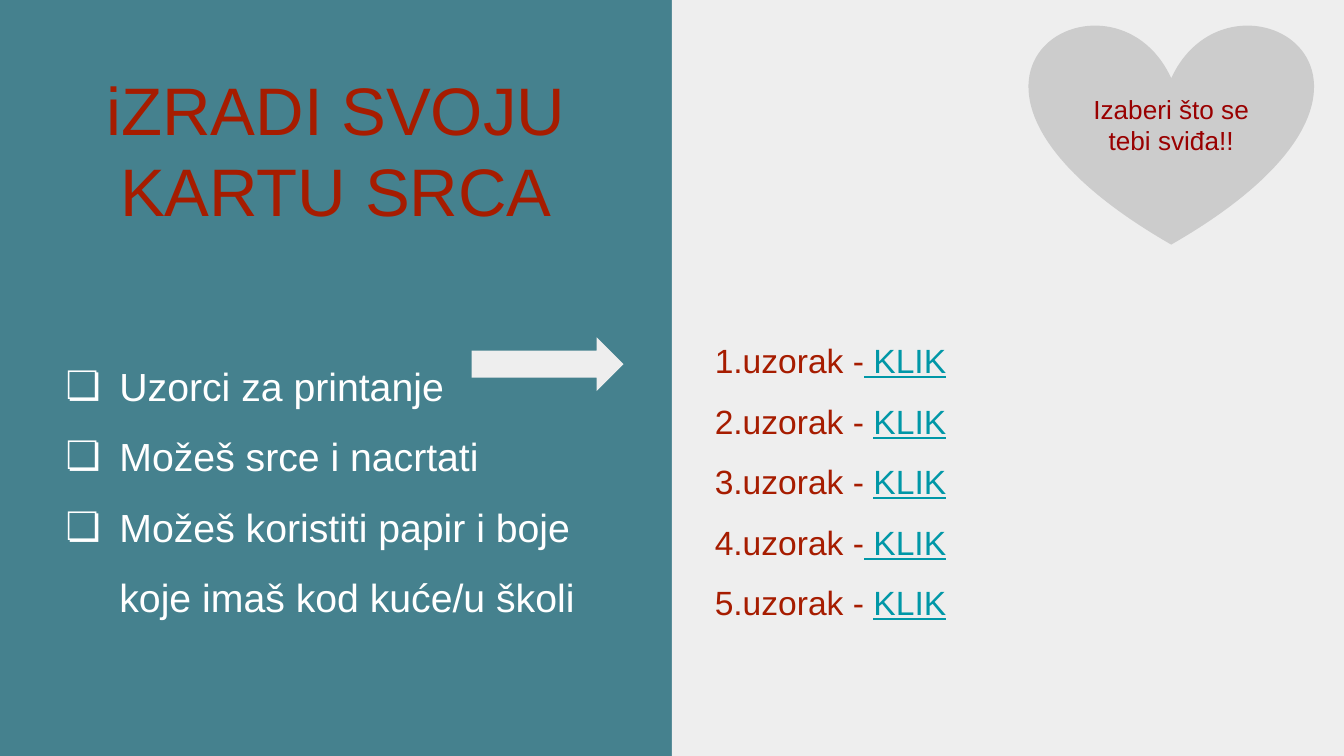
from typing import NamedTuple

from lxml.etree import SubElement
from pptx import Presentation
from pptx.dml.color import RGBColor
from pptx.enum.shapes import MSO_SHAPE as Shape
from pptx.enum.text import MSO_ANCHOR as Anchor, MSO_AUTO_SIZE as Fit, PP_ALIGN as Align
from pptx.oxml.ns import qn
from pptx.util import Inches, Pt

WIDTH = 10
HEIGHT = WIDTH * 9 / 16
TEAL, PALE, GREY = "45818E", "EEEEEE", "CCCCCC"
RED, DARK, LINK, WHITE = "A61C00", "990000", "0097A7", "FFFFFF"


class Box(NamedTuple):
    left: float
    top: float
    width: float
    height: float

    def place(self):
        return [Inches(n) for n in self]


class Run(NamedTuple):
    text: str
    color: str
    under: bool = False


def paint(fill, color: str) -> None:
    fill.solid()
    fill.fore_color.rgb = RGBColor.from_string(color)


def add_bullet(para, mark: str, color: str) -> None:
    props = para._p.get_or_add_pPr()
    props.set("marL", str(Inches(0.5)))
    props.set("indent", str(Inches(-0.4)))
    tint = SubElement(props, qn("a:buClr"))
    SubElement(tint, qn("a:srgbClr"), val=color)
    SubElement(props, qn("a:buFont"), typeface="Arial")
    SubElement(props, qn("a:buChar"), char=mark)


def write(shape, lines: list[list[Run]], *, size: float, align=Align.LEFT,
          anchor=Anchor.MIDDLE, spacing: float = 1.0, bullet: str = "") -> None:
    """Fill a shape with one paragraph for each list of runs."""
    frame = shape.text_frame
    frame.word_wrap = True
    frame.auto_size = Fit.NONE
    frame.vertical_anchor = anchor
    frame.margin_left = frame.margin_right = Inches(0.1)
    frame.margin_top = frame.margin_bottom = Inches(0.1)
    for i, line in enumerate(lines):
        para = frame.add_paragraph() if i else frame.paragraphs[0]
        para.alignment = align
        para.line_spacing = spacing
        if bullet:
            add_bullet(para, bullet, line[0].color)
        for part in line:
            run = para.add_run()
            run.text = part.text
            run.font.name = "Arial"
            run.font.size = Pt(size)
            run.font.underline = part.under
            run.font.color.rgb = RGBColor.from_string(part.color)


def add_shape(slide, kind, box: Box, color: str):
    shape = slide.shapes.add_shape(kind, *box.place())
    shape.shadow.inherit = False
    paint(shape.fill, color)
    shape.line.fill.background()
    return shape


def main() -> None:
    deck = Presentation()
    deck.slide_width, deck.slide_height = Inches(WIDTH), Inches(HEIGHT)
    slide = deck.slides.add_slide(deck.slide_layouts[5])
    paint(slide.background.fill, TEAL)

    panel = add_shape(slide, Shape.RECTANGLE, Box(WIDTH / 2, 0, WIDTH / 2, HEIGHT), PALE)
    title = slide.shapes.title
    title._element.addprevious(panel._element)
    title.left, title.top, title.width, title.height = Box(0.29, 0.45, 4.42, 1.36).place()
    write(title, [[Run("iZRADI SVOJU KARTU SRCA", RED)]], size=36,
          align=Align.CENTER, anchor=Anchor.BOTTOM)

    links = slide.shapes.add_textbox(*Box(5.22, 2.18, 4.56, 2.65).place())
    ends = [("-", " KLIK"), ("- ", "KLIK"), ("- ", "KLIK"), ("-", " KLIK"), ("- ", "KLIK")]
    write(links, [[Run(f"{n}.uzorak {dash}", RED), Run(link, LINK, True)]
                  for n, (dash, link) in enumerate(ends, 1)], size=18, spacing=1.5)

    tips = slide.shapes.add_textbox(*Box(0.29, 2.42, 4.42, 2.52).place())
    steps = ["Uzorci za printanje", "Možeš srce i nacrtati",
             "Možeš koristiti papir i boje koje imaš kod kuće/u školi"]
    write(tips, [[Run(step, WHITE)] for step in steps], size=21,
          anchor=Anchor.TOP, spacing=1.5, bullet="❏")

    add_shape(slide, Shape.RIGHT_ARROW, Box(3.51, 2.51, 1.13, 0.4), PALE)
    heart = add_shape(slide, Shape.HEART, Box(7.66, 0.17, 2.11, 1.65), GREY)
    write(heart, [[Run("Izaberi što se tebi sviđa!!", DARK)]], size=14, align=Align.CENTER)

    deck.save("out.pptx")


if __name__ == "__main__":
    main()
